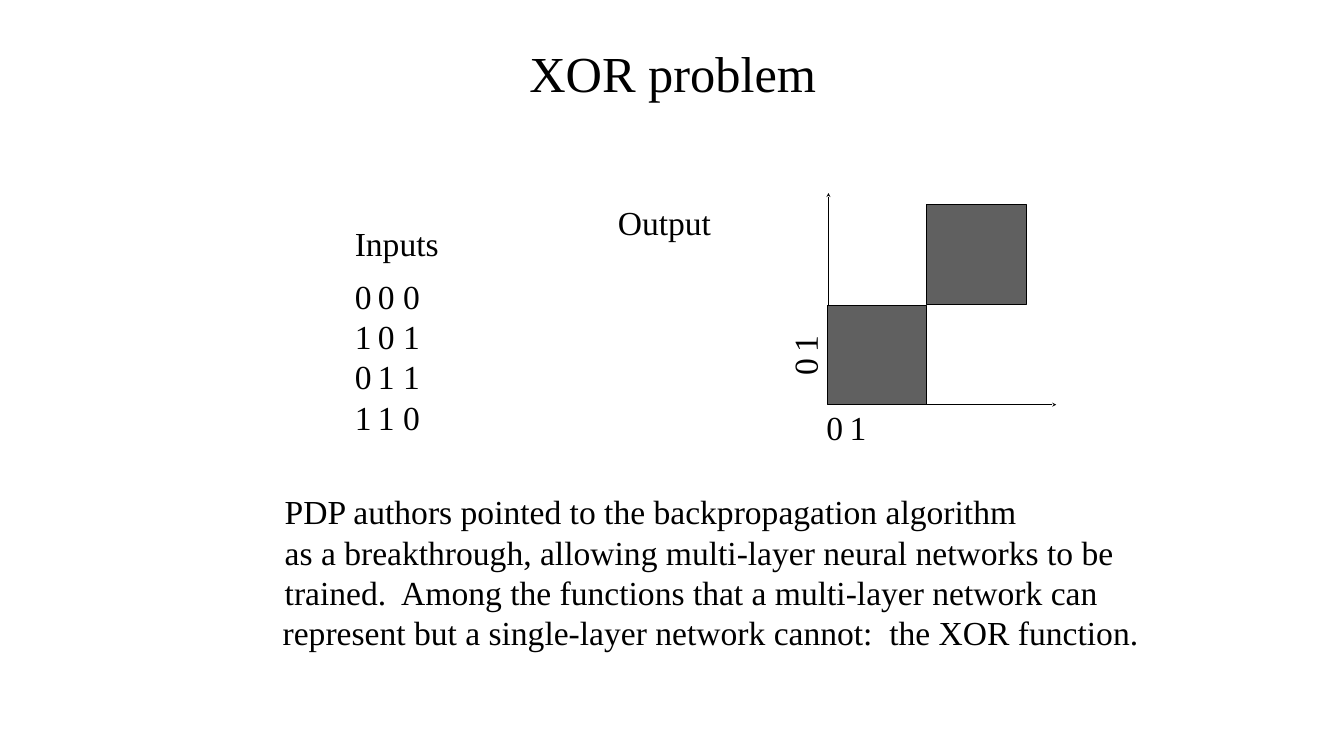
from pptx import Presentation
from pptx.dml.color import RGBColor
from pptx.enum.shapes import MSO_CONNECTOR, MSO_SHAPE
from pptx.enum.text import MSO_ANCHOR, MSO_AUTO_SIZE, PP_ALIGN
from pptx.oxml.ns import qn
from pptx.util import Pt
from lxml.etree import SubElement

PX = 9144
BLACK = RGBColor(0x00, 0x00, 0x00)
GRAY = RGBColor(0x60, 0x60, 0x60)
WHITE = RGBColor(0xFF, 0xFF, 0xFF)
FONT = "Times New Roman"
INSET = 11
INDENT = 4
LINE_BOX = 96

TRUTH_TABLE = ["0\t0\t0", "1\t0\t1", "0\t1\t1", "1\t1\t0"]
CONCLUSION = [
    "PDP authors pointed to the backpropagation algorithm",
    "as a breakthrough, allowing multi-layer neural networks to be",
    "trained.  Among the functions that a multi-layer network can "
    "represent but a single-layer network cannot:  the XOR function.",
]


def px(*lengths):
    return [length * PX for length in lengths]


def add_text(slide, box, lines, size=48, tabs=(), wrap=True):
    s = slide.shapes.add_textbox(*px(*box))
    tf = s.text_frame
    tf.word_wrap = wrap
    tf.auto_size = MSO_AUTO_SIZE.SHAPE_TO_FIT_TEXT
    tf.margin_left = tf.margin_right = tf.margin_top = tf.margin_bottom = INSET * PX
    tf.text = "\n".join(lines)
    for p in tf.paragraphs:
        props = p._p.get_or_add_pPr()
        props.set("marL", "0")
        props.set("indent", str(INDENT * PX))
        if tabs:
            tab_list = SubElement(props, qn("a:tabLst"))
            for pos in tabs:
                SubElement(tab_list, qn("a:tab"), pos=str(pos * PX), algn="l")
        for r in p.runs:
            r.font.name = FONT
            r.font.size = Pt(size)
            r.font.color.rgb = BLACK
    return s


def add_title(slide, box):
    tf = add_text(slide, box, ["XOR problem"], size=72).text_frame
    tf.auto_size = MSO_AUTO_SIZE.NONE
    tf.vertical_anchor = MSO_ANCHOR.MIDDLE
    tf.paragraphs[0].alignment = PP_ALIGN.CENTER


def add_truth_table(slide, box):
    x, y, w, h = box
    add_text(slide, (x, y + 42, 195, LINE_BOX), ["Inputs"], wrap=False)
    add_text(slide, (x + 522, y, 213, LINE_BOX), ["Output"], wrap=False)
    add_text(slide, (x, y + 147, w, h - 147), TRUTH_TABLE, tabs=(154, 620))


def add_axis(slide, tip, origin):
    line = slide.shapes.add_connector(MSO_CONNECTOR.STRAIGHT, *px(*tip, *origin))
    line.line.color.rgb = BLACK
    line.line.width = Pt(1)
    SubElement(line.line._get_or_add_ln(), qn("a:headEnd"), type="stealth")
    SubElement(line._element.spPr, qn("a:effectLst"))


def add_square(slide, x, y, side):
    s = slide.shapes.add_shape(MSO_SHAPE.RECTANGLE, *px(x, y, side, side))
    s.shadow.inherit = False
    s.fill.solid()
    s.fill.fore_color.rgb = GRAY
    s.line.color.rgb = BLACK
    s.line.width = Pt(1)


def add_plot(slide, box):
    x, y, w, h = box
    bottom = y + h
    side = 197
    add_axis(slide, (x, y), (x, bottom))
    add_axis(slide, (x + w, bottom), (x, bottom))
    for left, top, turn in ((x - 19, bottom - 6, 0), (x - 232, y + 147, 270)):
        label = add_text(slide, (left, top, 363, LINE_BOX), ["0\t1"], tabs=(304,))
        label.rotation = turn
    add_square(slide, x - 2, bottom - side, side)
    add_square(slide, x - 2 + side, y + 23, side)


def main():
    prs = Presentation()
    prs.slide_width, prs.slide_height = px(2667, 1500)
    slide = prs.slides.add_slide(prs.slide_layouts[6])
    slide.background.fill.solid()
    slide.background.fill.fore_color.rgb = WHITE
    add_title(slide, (433, -22, 1800, 330))
    add_truth_table(slide, (689, 389, 682, 472))
    add_text(slide, (550, 964, 1783, 325), CONCLUSION)
    add_plot(slide, (1644, 383, 452, 420))
    prs.save("out.pptx")


if __name__ == "__main__":
    main()
